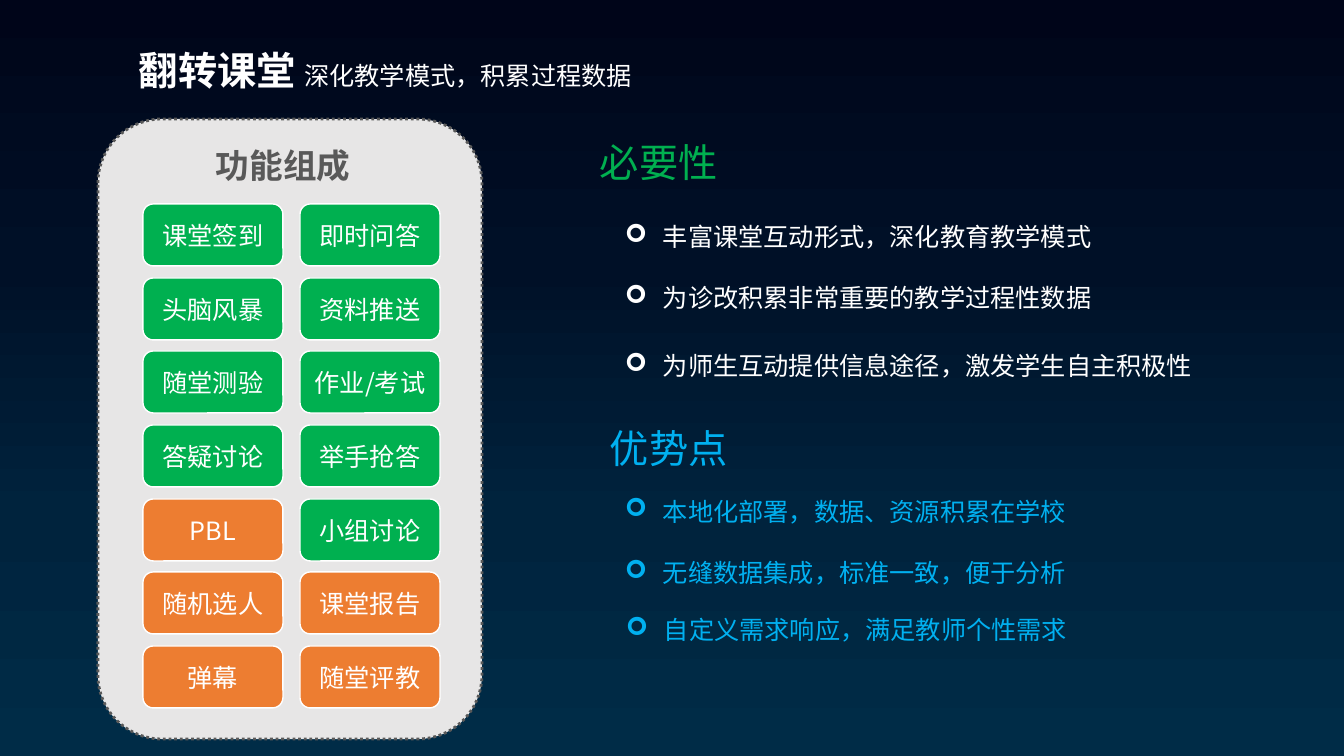
from copy import deepcopy
from lxml.etree import SubElement
from pptx import Presentation
from pptx.dml.color import RGBColor
from pptx.enum.dml import MSO_LINE
from pptx.enum.shapes import MSO_SHAPE
from pptx.enum.text import MSO_ANCHOR, MSO_AUTO_SIZE, PP_ALIGN
from pptx.oxml.ns import qn
from pptx.util import Emu, Pt

FONT = "Noto Sans CJK SC"
WHITE, GREEN, ORANGE, BLUE, GRAY, PALE = "FFFFFF", "00B050", "ED7D31", "00B0F0", "595959", "E7E6E6"
BACKGROUND = [(0, "000519"), (0.35, "001027"), (0.68, "00233D"), (1, "002C47")]

TITLE = [("翻转课堂 ", 28, True), ("深化教学模式，积累过程数据", 18, False)]
FEATURES = [
    [("课堂签到", GREEN), ("即时问答", GREEN)],
    [("头脑风暴", GREEN), ("资料推送", GREEN)],
    [("随堂测验", GREEN), ("作业/考试", GREEN)],
    [("答疑讨论", GREEN), ("举手抢答", GREEN)],
    [("PBL", ORANGE), ("小组讨论", GREEN)],
    [("随机选人", ORANGE), ("课堂报告", ORANGE)],
    [("弹幕", ORANGE), ("随堂评教", ORANGE)],
]
HEADINGS = [
    ("功能组成", (206, 140, 156, 50), 24, GRAY, True),
    ("必要性", (590, 133, 139, 57), 28, GREEN, False),
    ("优势点", (600, 419, 139, 57), 28, BLUE, False),
]
NEEDS = [
    ("丰富课堂互动形式，深化教育教学模式", 615, 207),
    ("为诊改积累非常重要的教学过程性数据", 615, 268),
    ("为师生互动提供信息途径，激发学生自主积极性", 615, 336),
]
STRENGTHS = [
    ("本地化部署，数据、资源积累在学校", 615, 491),
    ("无缝数据集成，标准一致，便于分析", 615, 552),
    ("自定义需求响应，满足教师个性需求", 616, 609),
]

PAGE_WIDTH, PAGE_HEIGHT = 1344, 756
PANEL = (98, 119, 384, 620)
GRID_LEFT, GRID_TOP, COLUMN_STEP, GRID_DROP = 143, 204, 157, 442
CELL_WIDTH, CELL_HEIGHT = 140, 62
BULLET_INDENT = 38


def px(length):
    return Emu(round(length * 914400 / 100.8))


def color(code):
    return RGBColor.from_string(code)


def style(span, size, code, bold=False):
    span.font.name = FONT
    span.font.size = Pt(size)
    span.font.bold = bold
    span.font.color.rgb = color(code)
    SubElement(span.font._element, qn("a:ea"), typeface=FONT)


def add_card(page, place, fill, line, width):
    card = page.shapes.add_shape(MSO_SHAPE.ROUNDED_RECTANGLE, *map(px, place))
    card.shadow.inherit = False
    card.fill.solid()
    card.fill.fore_color.rgb = color(fill)
    card.line.color.rgb = color(line)
    card.line.width = Pt(width)
    return card


def add_text(page, place, spans, code, wrap=False):
    box = page.shapes.add_textbox(*map(px, place))
    frame = box.text_frame
    frame.word_wrap = wrap
    frame.auto_size = MSO_AUTO_SIZE.SHAPE_TO_FIT_TEXT
    para = frame.paragraphs[0]
    for text, size, bold in spans:
        span = para.add_run()
        span.text = text
        style(span, size, code, bold)
    return frame


def add_bullet(para):
    properties = para._p.get_or_add_pPr()
    properties.set("marL", str(px(BULLET_INDENT)))
    properties.set("indent", str(-px(BULLET_INDENT)))
    SubElement(properties, qn("a:buFont"), typeface="Wingdings")
    SubElement(properties, qn("a:buChar"), char="➢")


def paint_background(page):
    fill = page.background.fill
    fill.gradient()
    fill.gradient_angle = 270
    stop_list = page._element.find(".//" + qn("a:gsLst"))
    for _ in BACKGROUND[2:]:
        stop_list.append(deepcopy(stop_list[0]))
    for stop, (position, code) in zip(fill.gradient_stops, BACKGROUND):
        stop.position = position
        stop.color.rgb = color(code)


def add_features(page):
    panel = add_card(page, PANEL, PALE, GRAY, 2)
    panel.line.dash_style = MSO_LINE.ROUND_DOT
    for row, pair in enumerate(FEATURES):
        top = GRID_TOP + round(row * GRID_DROP / (len(FEATURES) - 1))
        for column, (text, fill) in enumerate(pair):
            left = GRID_LEFT + column * COLUMN_STEP
            card = add_card(page, (left, top, CELL_WIDTH, CELL_HEIGHT), fill, WHITE, 1)
            frame = card.text_frame
            frame.text = text
            frame.word_wrap = True
            frame.vertical_anchor = MSO_ANCHOR.MIDDLE
            para = frame.paragraphs[0]
            para.alignment = PP_ALIGN.CENTER
            style(para.runs[0], 18, WHITE)


def main():
    deck = Presentation()
    deck.slide_width, deck.slide_height = px(PAGE_WIDTH), px(PAGE_HEIGHT)
    page = deck.slides.add_slide(deck.slide_layouts[6])
    paint_background(page)
    add_features(page)

    title = add_text(page, (129, 32, 717, 62), TITLE, WHITE, True)
    title.paragraphs[0].line_spacing = 1.2
    for text, place, size, code, bold in HEADINGS:
        add_text(page, place, [(text, size, bold)], code)

    for text, left, top in NEEDS:
        frame = add_text(page, (left, top, PAGE_WIDTH - left, 59), [(text, 18, False)], WHITE, True)
        frame.auto_size = MSO_AUTO_SIZE.NONE
        frame.vertical_anchor = MSO_ANCHOR.MIDDLE
        add_bullet(frame.paragraphs[0])
    for text, left, top in STRENGTHS:
        frame = add_text(page, (left, top, 466, 40), [(text, 18, False)], BLUE)
        add_bullet(frame.paragraphs[0])

    deck.save("out.pptx")


if __name__ == "__main__":
    main()
